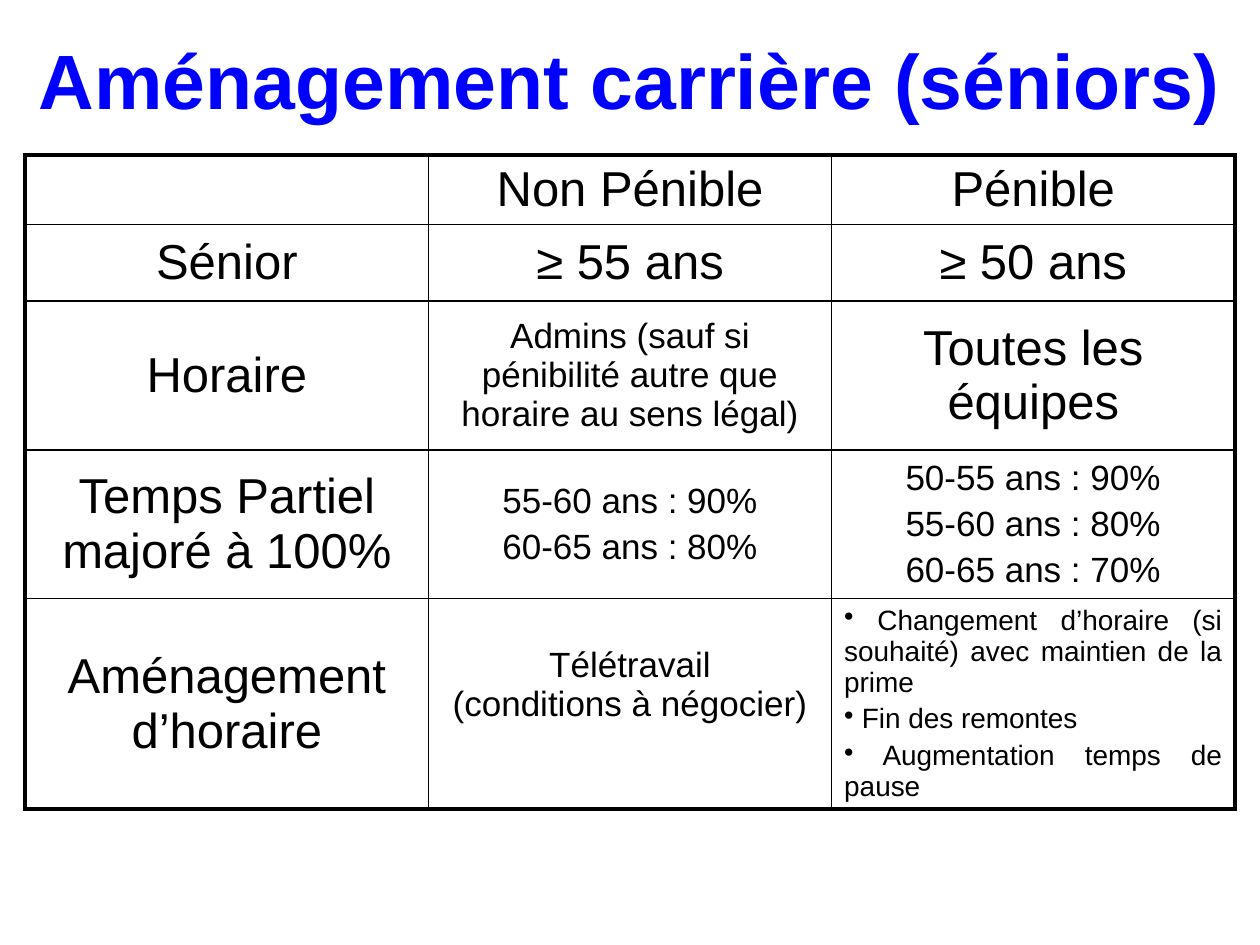
from dataclasses import dataclass

from lxml.etree import SubElement
from pptx import Presentation
from pptx.dml.color import RGBColor
from pptx.enum.text import MSO_ANCHOR, PP_ALIGN
from pptx.oxml.ns import qn
from pptx.util import Inches, Pt


@dataclass(frozen=True)
class Theme:
    font: str = "Arial"
    title_color: str = "0000FF"
    ink: str = "000000"
    title_size: int = 44
    large: int = 28
    medium: int = 20
    small: int = 16
    outer_line: float = 2.25
    inner_line: float = 1
    paragraph_gap: float = 0.2  # share of the type size


THEME = Theme()
TITLE = "Aménagement carrière (séniors)"
TABLE_LEFT, TABLE_TOP = 0.2, 1.23
COLUMN_WIDTH = 3.2
ROW_HEIGHTS = [0.55, 0.61, 1.18, 1.18, 1.67]

# Each cell is a list of paragraphs
ROWS = [
    [[], ["Non Pénible"], ["Pénible"]],
    [["Sénior"], ["≥ 55 ans"], ["≥ 50 ans"]],
    [["Horaire"],
     ["Admins (sauf si pénibilité autre que horaire au sens légal)"],
     ["Toutes les équipes"]],
    [["Temps Partiel majoré à 100%"],
     ["55-60 ans : 90%", "60-65 ans : 80%"],
     ["50-55 ans : 90%", "55-60 ans : 80%", "60-65 ans : 70%"]],
    [["Aménagement d’horaire"],
     ["Télétravail\v(conditions à négocier)"],
     [" Changement d’horaire (si souhaité) avec maintien de la prime",
      " Fin des remontes",
      " Augmentation temps de pause"]],
]
# Cells set smaller than the rest, by (row, column)
CELL_SIZES = {(2, 1): THEME.medium, (3, 1): THEME.medium, (3, 2): THEME.medium,
              (4, 1): THEME.medium, (4, 2): THEME.small}
BULLETED_CELL = (4, 2)
RAISED_CELL = (4, 1)


def style_font(font, size, color, bold=False):
    font.name = THEME.font
    font.size = Pt(size)
    font.bold = bold
    font.color.rgb = RGBColor.from_string(color)


def add_title(slide, width):
    title = slide.shapes.title
    title.left, title.top, title.width, title.height = 0, 0, width, Inches(1.25)
    frame = title.text_frame
    frame.text = TITLE
    frame.vertical_anchor = MSO_ANCHOR.MIDDLE
    paragraph = frame.paragraphs[0]
    paragraph.alignment = PP_ALIGN.CENTER
    style_font(paragraph.font, THEME.title_size, THEME.title_color, bold=True)


def add_bullet(paragraph):
    SubElement(paragraph._p.get_or_add_pPr(), qn("a:buChar"), char="•")


def set_borders(cell, row, column):
    """Draw a thick line on the table's edge and a thin one inside."""
    edges = {"a:lnL": column == 0, "a:lnR": column == len(ROWS[0]) - 1,
             "a:lnT": row == 0, "a:lnB": row == len(ROWS) - 1}
    properties = cell._tc.get_or_add_tcPr()
    for tag, is_outer in edges.items():
        width = Pt(THEME.outer_line if is_outer else THEME.inner_line)
        line = SubElement(properties, qn(tag), w=str(int(width)))
        fill = SubElement(line, qn("a:solidFill"))
        SubElement(fill, qn("a:srgbClr"), val=THEME.ink)


def fill_cell(cell, texts, size, bulleted):
    cell.vertical_anchor = MSO_ANCHOR.MIDDLE
    frame = cell.text_frame
    frame.text = "\n".join(texts)
    for index, paragraph in enumerate(frame.paragraphs):
        paragraph.alignment = PP_ALIGN.JUSTIFY if bulleted else PP_ALIGN.CENTER
        if index:
            paragraph.space_before = Pt(size * THEME.paragraph_gap)
        if bulleted:
            add_bullet(paragraph)
        style_font(paragraph.font, size, THEME.ink)


def add_career_table(slide):
    column_count = len(ROWS[0])
    table = slide.shapes.add_table(
        len(ROWS), column_count, Inches(TABLE_LEFT), Inches(TABLE_TOP),
        Inches(COLUMN_WIDTH * column_count), Inches(sum(ROW_HEIGHTS))).table
    table.first_row = table.horz_banding = False
    for column in table.columns:
        column.width = Inches(COLUMN_WIDTH)
    for row, height in zip(table.rows, ROW_HEIGHTS):
        row.height = Inches(height)

    for row, cells in enumerate(ROWS):
        for column, texts in enumerate(cells):
            place = (row, column)
            cell = table.cell(row, column)
            fill_cell(cell, texts, CELL_SIZES.get(place, THEME.large),
                      place == BULLETED_CELL)
            set_borders(cell, row, column)
            cell.fill.background()
    # The telework note sits a little above the middle
    table.cell(*RAISED_CELL).margin_bottom = Inches(0.35)


def main():
    presentation = Presentation()
    presentation.slide_width = Inches(10)
    presentation.slide_height = Inches(7.5)
    slide = presentation.slides.add_slide(presentation.slide_layouts[5])
    add_title(slide, presentation.slide_width)
    add_career_table(slide)
    presentation.save("out.pptx")


if __name__ == "__main__":
    main()
